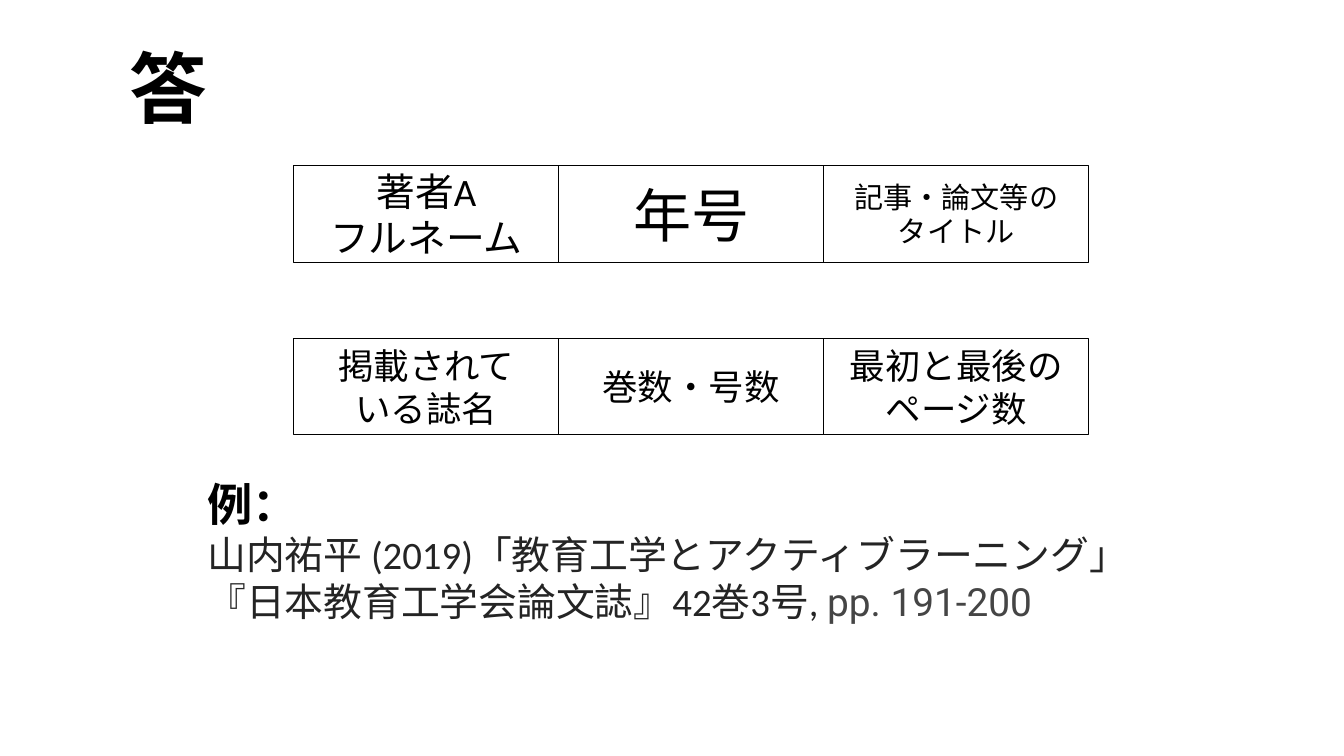
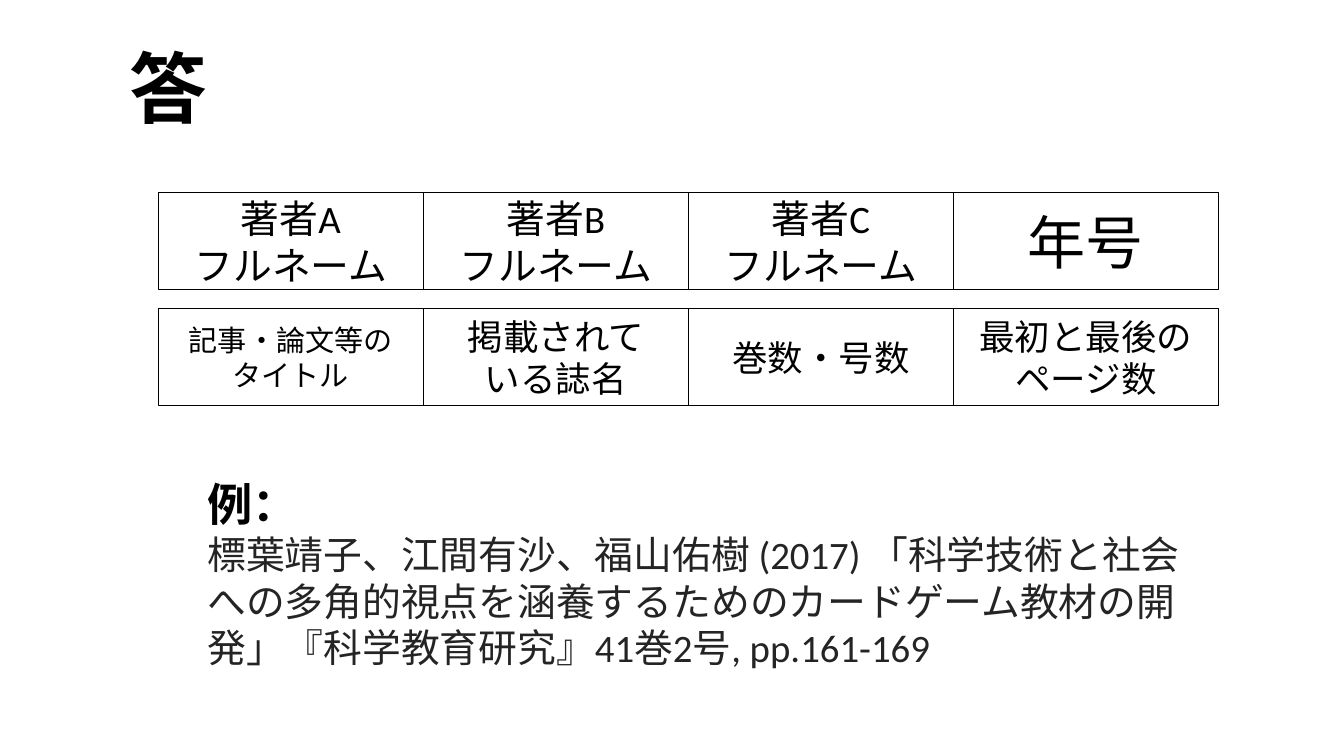
from dataclasses import dataclass

from pptx import Presentation
from pptx.dml.color import RGBColor
from pptx.enum.shapes import MSO_SHAPE
from pptx.enum.text import MSO_ANCHOR, MSO_AUTO_SIZE, PP_ALIGN
from pptx.util import Pt

RECT = MSO_SHAPE.RECTANGLE
MIDDLE = MSO_ANCHOR.MIDDLE
LEFT, CENTER = PP_ALIGN.LEFT, PP_ALIGN.CENTER
NO_FIT, GROW = MSO_AUTO_SIZE.NONE, MSO_AUTO_SIZE.SHAPE_TO_FIT_TEXT


@dataclass(frozen=True)
class Theme:
    font: str = "Calibri"
    alt: str = "Roboto"
    black: str = "000000"
    white: str = "FFFFFF"
    dark: str = "242424"
    gray: str = "454545"
    title: float = 77.5
    head: float = 45.2
    text: float = 38.8
    huge: float = 58.1
    mid: float = 35.5
    small: float = 29.1


T = Theme()

# Content: each card holds its lines and type size
YEAR = (["年号"], T.huge)
PAPER = (["記事・論文等の", "タイトル"], T.small)
BOOK = (["掲載されて", "いる誌名"], T.mid)
ISSUE = (["巻数・号数"], T.mid)
PAGES = (["最初と最後の", "ページ数"], T.mid)


def author(mark):
    return ["著者" + mark, "フルネーム"], T.text


TITLE = "答"
LABEL = "例："
SLIDES = [
    {
        "left": 293.8,
        "rows": [
            (165.6, [author("A"), YEAR, PAPER]),
            (338.4, [BOOK, ISSUE, PAGES]),
        ],
        "cite": [
            ("山内祐平 (2019)「教育工学とアクティブラーニング」"
             "『日本教育工学会論文誌』42巻3号, ", T.font, T.dark),
            ("pp. 191-200", T.alt, T.gray),
        ],
        "tall": 156.2,
    },
    {
        "left": 158.4,
        "rows": [
            (193, [author("A"), author("B"), author("C"), YEAR]),
            (308.9, [PAPER, BOOK, ISSUE, PAGES]),
        ],
        "cite": [
            ("標葉靖子、江間有沙、福山佑樹 (2017) 「科学技術と社会への多角的視点を"
             "涵養するためのカードゲーム教材の開発」『科学教育研究』41巻2号, "
             "pp.161-169", T.font, T.dark),
        ],
        "tall": 203,
    },
]

# Shared geometry, in points
SIZE = (1344, 756)
TITLE_BOX = (122.4, 19.4, 1003, 146.2)
CARD = (265, 96.5)
CITE_AT = (200.2, 473)
CITE_WIDE = 1003


def place(shape, box):
    shape.left, shape.top, shape.width, shape.height = map(Pt, box)


def add_run(para, text, size, color=T.black, font=T.font, bold=False):
    run = para.add_run()
    run.text = text
    run.font.name = font
    run.font.size = Pt(size)
    run.font.bold = bold
    run.font.color.rgb = RGBColor.from_string(color)


def add_title(slide):
    frame = slide.shapes.title.text_frame
    frame.auto_size = NO_FIT
    frame.vertical_anchor = MIDDLE
    para = frame.paragraphs[0]
    para.alignment = LEFT
    para.line_spacing = 0.9
    add_run(para, TITLE, T.title, bold=True)


def add_card(slide, left, top, lines, size):
    card = slide.shapes.add_shape(RECT, *map(Pt, (left, top, *CARD)))
    card.shadow.inherit = False
    card.fill.solid()
    card.fill.fore_color.rgb = RGBColor.from_string(T.white)
    card.line.color.rgb = RGBColor.from_string(T.black)
    card.line.width = Pt(1)
    frame = card.text_frame
    frame.word_wrap = True
    frame.vertical_anchor = MIDDLE
    for i, line in enumerate(lines):
        para = frame.add_paragraph() if i else frame.paragraphs[0]
        para.alignment = CENTER
        add_run(para, line, size)


def add_cite(slide, runs, tall):
    box = slide.shapes.add_textbox(*map(Pt, (*CITE_AT, CITE_WIDE, tall)))
    frame = box.text_frame
    frame.word_wrap = True
    frame.auto_size = GROW
    add_run(frame.paragraphs[0], LABEL, T.head, bold=True)
    para = frame.add_paragraph()
    for text, font, color in runs:
        add_run(para, text, T.text, color, font)


def main():
    deck = Presentation()
    deck.slide_width, deck.slide_height = map(Pt, SIZE)

    # The layout sets the title's place for every slide
    layout = deck.slide_layouts.get_by_name("Title Only")
    place(layout.placeholders[0], TITLE_BOX)

    for data in SLIDES:
        slide = deck.slides.add_slide(layout)
        add_title(slide)
        for top, cards in data["rows"]:
            for col, (lines, size) in enumerate(cards):
                add_card(slide, data["left"] + col * CARD[0], top, lines, size)
        add_cite(slide, data["cite"], data["tall"])

    deck.save("out.pptx")


if __name__ == "__main__":
    main()
